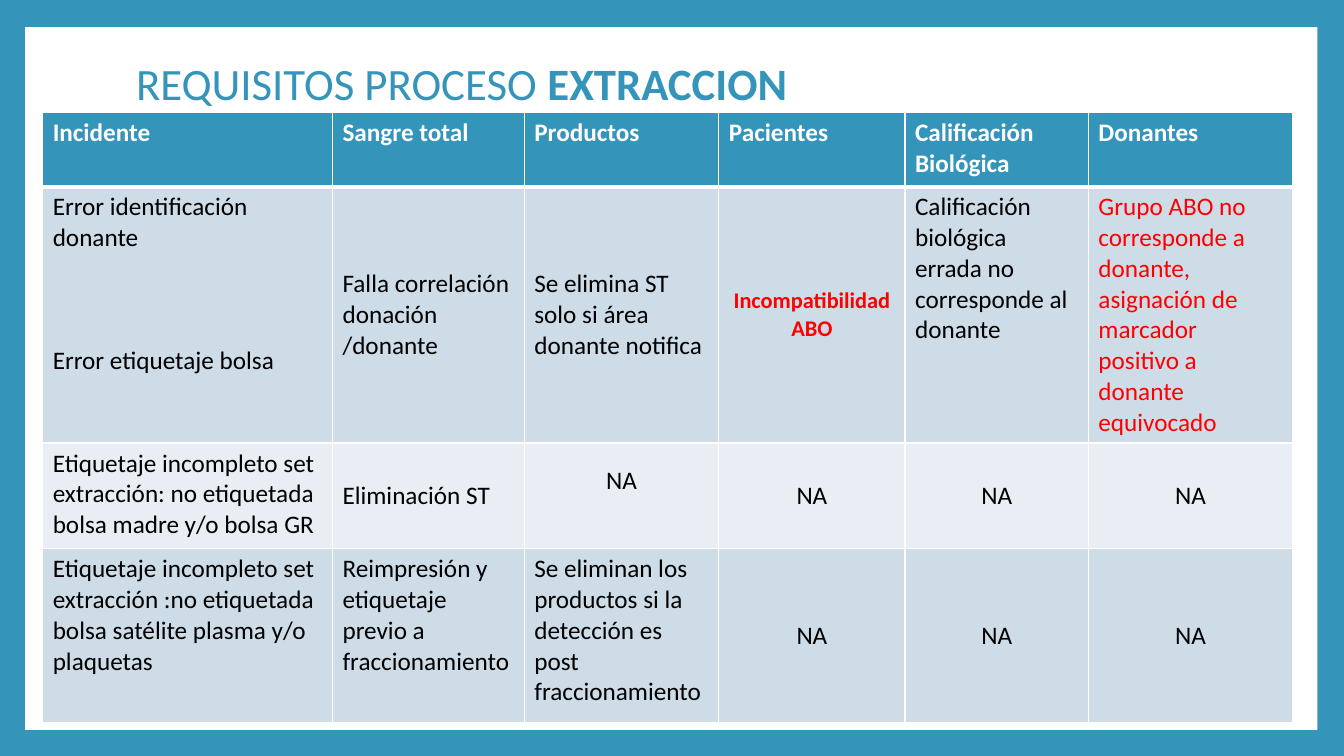
from pptx import Presentation
from pptx import util as u
from pptx.dml.color import RGBColor
from pptx.enum import shapes, text
from pptx.oxml import parse_xml
from pptx.oxml.ns import nsdecls

# Content
COLORS = {"blue": "3494BA", "white": "FFFFFF", "black": "000000",
          "red": "FF0000", "odd": "CEDCE7", "even": "E8EEF3"}
FONT = "Calibri"
TITLE = [("REQUISITOS PROCESO ", False), ("EXTRACCION", True)]
ROWS = [
    ["Incidente", "Sangre total", "Productos", "Pacientes",
     "Calificación Biológica", "Donantes"],
    ["Error identificación donante\nError etiquetaje bolsa",
     "Falla correlación donación /donante",
     "Se elimina ST solo si área donante notifica",
     "Incompatibilidad ABO",
     "Calificación biológica errada no corresponde al donante",
     "Grupo ABO no corresponde a donante, asignación de marcador positivo "
     "a donante equivocado"],
    ["Etiquetaje incompleto set extracción: no etiquetada bolsa madre y/o bolsa GR",
     "Eliminación ST", "NA", "NA", "NA", "NA"],
    ["Etiquetaje incompleto set extracción :no etiquetada bolsa satélite plasma "
     "y/o plaquetas",
     "Reimpresión y etiquetaje previo a fraccionamiento",
     "Se eliminan los productos si la detección es post fraccionamiento",
     "NA", "NA", "NA"],
]
COLUMN_WIDTHS = [207, 137, 139, 133, 131, 146]
ROW_HEIGHTS = [53, 178, 75.5, 124]
MIDDLE = {(1, 1), (1, 2), (1, 3), (2, 1)}  # row, column
ABO_RISK, DONOR_RISK, RAISED = (1, 3), (1, 5), (2, 2)
PARAGRAPH_GAP = 66


def color(name):
    return RGBColor.from_string(COLORS[name])


def add_span(para, words, size, tint, bold):
    span = para.add_run()
    span.text = words
    span.font.name = FONT
    span.font.size = u.Pt(size)
    span.font.bold = bold
    span.font.color.rgb = color(tint)


def add_borders(cell, row):
    """White rules, thicker below the header row."""
    widths = {"L": 1, "R": 1, "T": 3 if row == 1 else 1, "B": 3 if row == 0 else 1}
    properties = cell._tc.get_or_add_tcPr()
    for side, width in widths.items():
        properties.append(parse_xml(
            f'<a:ln{side} {nsdecls("a")} w="{u.Pt(width)}"><a:solidFill>'
            f'<a:srgbClr val="{COLORS["white"]}"/></a:solidFill></a:ln{side}>'))


def fill_cell(cell, row, column, words):
    place = (row, column)
    header, centered = row == 0, words == "NA" or place == ABO_RISK
    add_borders(cell, row)
    cell.fill.solid()
    cell.fill.fore_color.rgb = color("blue" if header else "odd" if row % 2 else "even")
    if centered or place in MIDDLE:
        cell.vertical_anchor = text.MSO_ANCHOR.MIDDLE
    if place == RAISED:
        cell.margin_bottom = u.Pt(25.6)
    tint = "white" if header else "red" if place in (ABO_RISK, DONOR_RISK) else "black"
    for number, line in enumerate(words.split("\n")):
        frame = cell.text_frame
        para = frame.add_paragraph() if number else frame.paragraphs[0]
        if number:
            para.space_before = u.Pt(PARAGRAPH_GAP)
        if centered:
            para.alignment = text.PP_ALIGN.CENTER
        add_span(para, line, 16 if place == ABO_RISK else 18, tint,
                 header or place == ABO_RISK)


# Slide and white panel inside the blue frame
deck = Presentation()
deck.slide_width, deck.slide_height = u.Pt(960), u.Pt(540)
page = deck.slides.add_slide(deck.slide_layouts[5])
page.background.fill.solid()
page.background.fill.fore_color.rgb = color("blue")
panel = page.shapes.add_shape(shapes.MSO_SHAPE.RECTANGLE,
                              u.Pt(18), u.Pt(19.4), u.Pt(923), u.Pt(502))
panel.shadow.inherit = False
panel.fill.solid()
panel.fill.fore_color.rgb = color("white")
panel.line.fill.background()

# Title, in front of the panel
title = page.shapes.title
title.element.addprevious(panel.element)
title.left, title.top, title.width, title.height = (
    u.Pt(90), u.Pt(48), u.Pt(778), u.Pt(27))
title.text_frame.auto_size = text.MSO_AUTO_SIZE.NONE
title.text_frame.vertical_anchor = text.MSO_ANCHOR.MIDDLE
heading = title.text_frame.paragraphs[0]
heading.alignment = text.PP_ALIGN.LEFT
heading.line_spacing = 0.9
for words, bold in TITLE:
    add_span(heading, words, 32, "blue", bold)

# Table of incidents
table = page.shapes.add_table(
    len(ROWS), len(COLUMN_WIDTHS), u.Pt(30.5), u.Pt(80.5),
    u.Pt(sum(COLUMN_WIDTHS)), u.Pt(sum(ROW_HEIGHTS))).table
for column, width in zip(table.columns, COLUMN_WIDTHS):
    column.width = u.Pt(width)
for row, height in zip(table.rows, ROW_HEIGHTS):
    row.height = u.Pt(height)
for row, entries in enumerate(ROWS):
    for column, words in enumerate(entries):
        fill_cell(table.cell(row, column), row, column, words)

deck.save("out.pptx")
